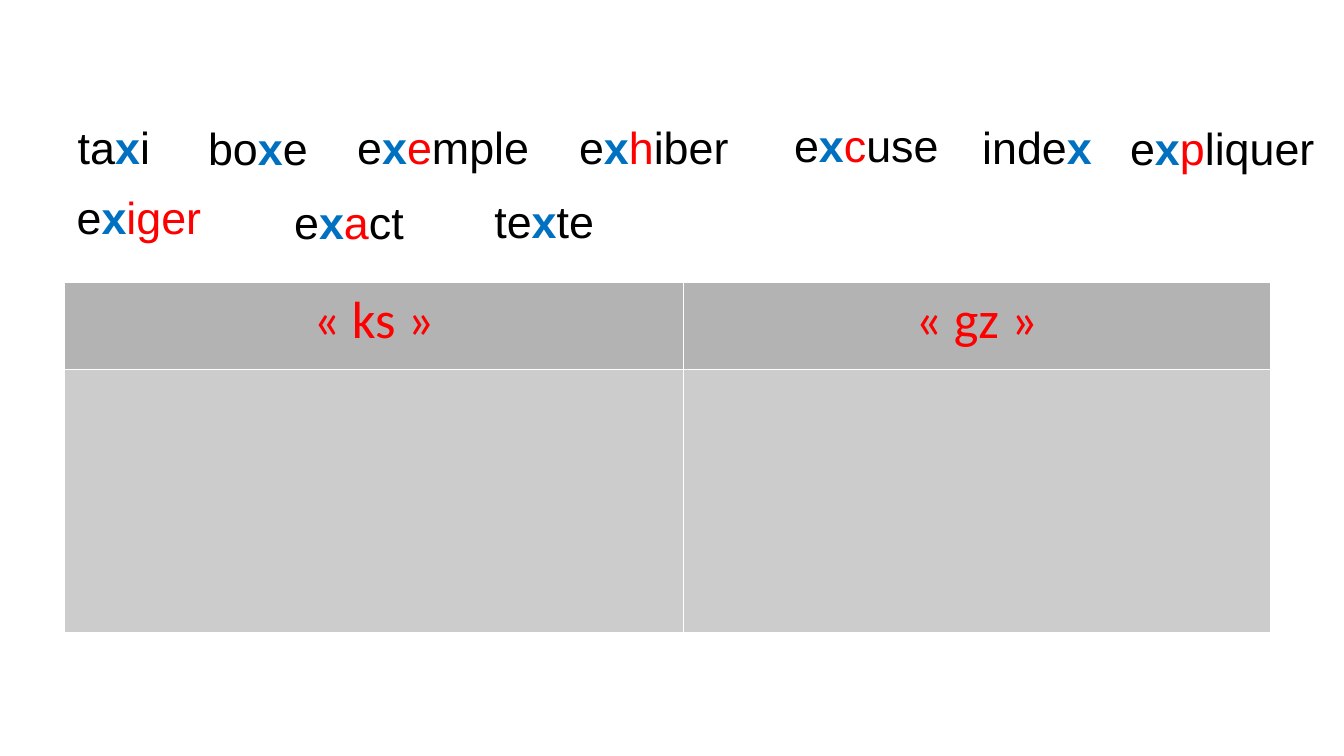
from pptx import Presentation
from pptx.dml.color import RGBColor
from pptx.enum.text import PP_ALIGN
from pptx.oxml.ns import qn
from pptx.util import Inches, Pt
from lxml.etree import SubElement

BLACK = RGBColor(0x00, 0x00, 0x00)
BLUE = RGBColor(0x00, 0x70, 0xC0)
RED = RGBColor(0xFF, 0x00, 0x00)
HEADER_GREY = RGBColor(0xB3, 0xB3, 0xB3)
BODY_GREY = RGBColor(0xCC, 0xCC, 0xCC)

# Left, top, width, height, then the letters before x, red after x, black after x
WORDS = [
    (0.48, 0.84, 0.91, 0.54, "ta", "", "i"),
    (1.45, 0.85, 1.10, 0.54, "bo", "", "e"),
    (2.56, 0.84, 1.73, 0.80, "e", "e", "mple"),
    (4.21, 0.84, 1.55, 0.62, "e", "h", "iber"),
    (5.81, 0.83, 1.39, 0.74, "e", "c", "use"),
    (7.21, 0.84, 1.26, 0.71, "inde", "", ""),
    (8.31, 0.85, 1.69, 0.58, "e", "p", "liquer"),
    (2.09, 1.40, 1.42, 0.55, "e", "a", "ct"),
    (3.58, 1.39, 1.18, 0.58, "te", "", "te"),
]
EXIGER = (0.57, 1.41, 1.42, 0.56, "e", "iger", "")
SOUNDS = ["ks", "gz"]


def add_word(page, left, top, width, height, before, red, after, flush=False):
    """Add a word with a bold blue x; flush drops margins and spacing."""
    box = page.shapes.add_textbox(
        Inches(left), Inches(top), Inches(width), Inches(height))
    frame = box.text_frame
    frame.word_wrap = True
    para = frame.paragraphs[0]
    para.font.name = "Arial"
    para.font.size = Pt(24)
    if flush:
        frame.margin_left = frame.margin_right = 0
        frame.margin_top = frame.margin_bottom = 0
    else:
        para.space_before = Pt(4.8)
    for text, color in ((before, BLACK), ("x", BLUE), (red, RED), (after, BLACK)):
        if text:
            span = para.add_run()
            span.text = text
            span.font.color.rgb = color
            span.font.bold = color == BLUE


def style_cell(cell, color):
    """Give a cell thin white borders and a plain fill."""
    properties = cell._tc.get_or_add_tcPr()
    for side in ("a:lnL", "a:lnR", "a:lnT", "a:lnB"):
        line = SubElement(properties, qn(side), w=str(Pt(0.06)))
        fill = SubElement(line, qn("a:solidFill"))
        SubElement(fill, qn("a:srgbClr"), val="FFFFFF")
    cell.fill.solid()
    cell.fill.fore_color.rgb = color


def add_sound_table(page):
    table = page.shapes.add_table(
        2, 2, Inches(0.48), Inches(2.1), Inches(8.97), Inches(2.6)).table
    for column, width in zip(table.columns, (4.6, 4.37)):
        column.width = Inches(width)
    for row, height, color in zip(
            table.rows, (0.65, 1.95), (HEADER_GREY, BODY_GREY)):
        row.height = Inches(height)
        for cell in row.cells:
            style_cell(cell, color)
    for cell, sound in zip(table.rows[0].cells, SOUNDS):
        cell.text = f"«\u00a0{sound}\u00a0»"
        para = cell.text_frame.paragraphs[0]
        para.alignment = PP_ALIGN.CENTER
        para.font.name = "Calibri"
        para.font.size = Pt(28)
        para.font.bold = False
        para.font.color.rgb = RED


def main():
    # Wide page, 16 by 9
    deck = Presentation()
    deck.slide_width = Inches(10)
    deck.slide_height = Inches(10 * 9 / 16)
    page = deck.slides.add_slide(deck.slide_layouts[6])

    # Sorting table
    add_sound_table(page)

    # Words to sort
    for word in WORDS:
        add_word(page, *word)
    add_word(page, *EXIGER, flush=True)

    deck.save("out.pptx")


main()
